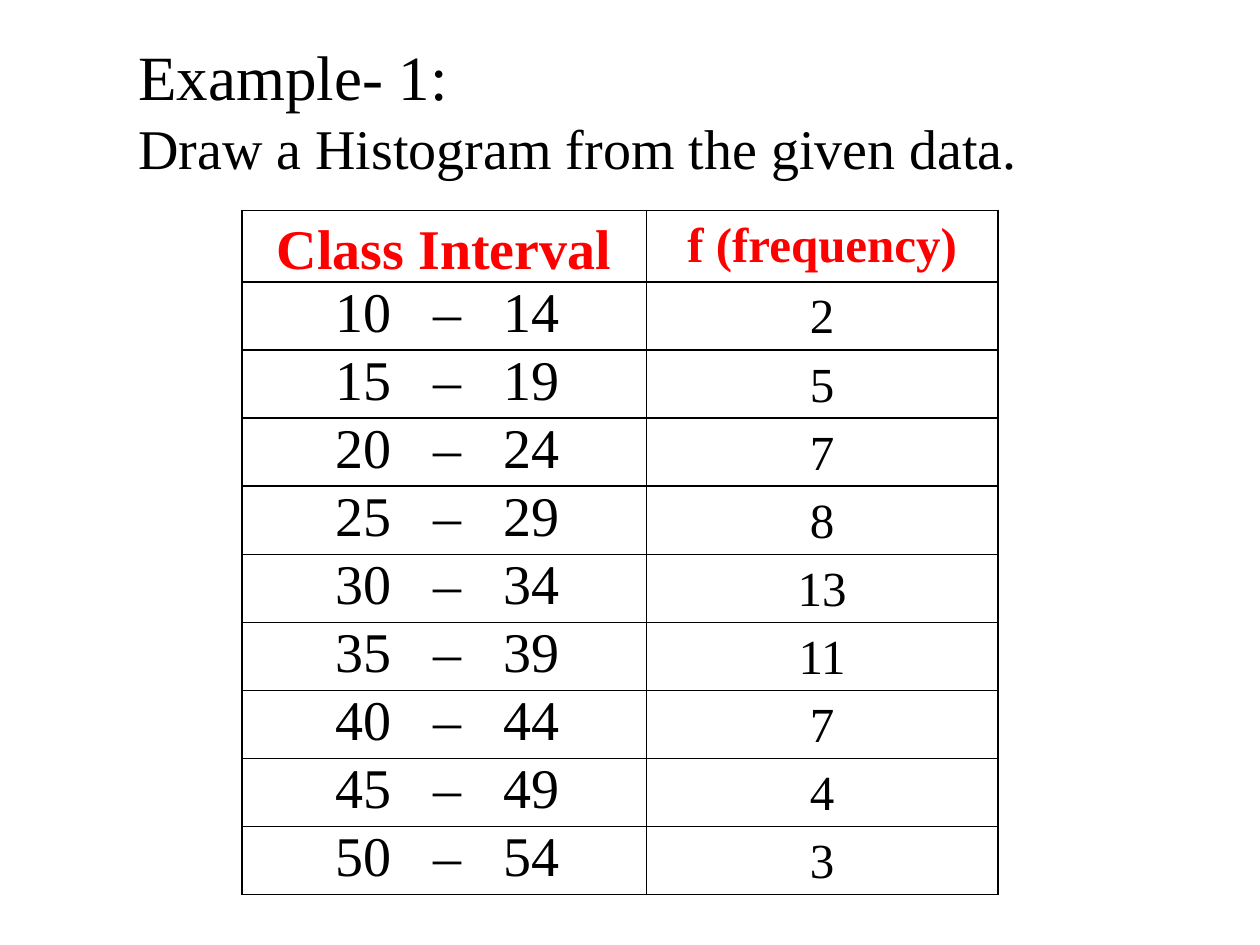
import pptx
import pptx.dml.color
import pptx.enum.text
import pptx.oxml
import pptx.oxml.ns
import pptx.util
from pptx.util import Inches

BLACK = pptx.dml.color.RGBColor(0, 0, 0)
RED = pptx.dml.color.RGBColor(255, 0, 0)
FONT_NAME = "Times New Roman"
CENTER = pptx.enum.text.PP_ALIGN.CENTER
FREQUENCIES = [2, 5, 7, 8, 13, 11, 7, 4, 3]
FIRST_CLASS, CLASS_WIDTH = 10, 5


def write_text(paragraph, text, size, color=BLACK, bold=False, align=None,
               line_spacing=None, space_before=None, indent=None, wide_space=None):
    """Fill a paragraph; wide_space widens each space by that many points."""
    paragraph.alignment = align
    paragraph.line_spacing = line_spacing
    if space_before is not None:
        paragraph.space_before = pptx.util.Pt(space_before)
    if indent is not None:
        paragraph._p.get_or_add_pPr().set("marL", str(indent))
    pieces = text.replace(" ", "| |").split("|") if wide_space else [text]
    for piece in pieces:
        run = paragraph.add_run()
        run.text = piece
        run.font.name = FONT_NAME
        run.font.size = pptx.util.Pt(size)
        run.font.bold = bold
        run.font.color.rgb = color
        if piece == " ":
            run._r.get_or_add_rPr().set("spc", str(wide_space * 100))


def format_cell(cell):
    """Clear the fill, set the margins and draw thin black borders."""
    cell.fill.background()
    cell.margin_left = cell.margin_right = Inches(0.07)
    cell.margin_top = cell.margin_bottom = 0
    properties = cell._tc.get_or_add_tcPr()
    for position, side in enumerate(("lnL", "lnR", "lnT", "lnB")):
        border = pptx.oxml.parse_xml(
            f'<a:{side} {pptx.oxml.ns.nsdecls("a")} w="12700">'
            f'<a:solidFill><a:srgbClr val="{BLACK}"/></a:solidFill></a:{side}>')
        properties.insert(position, border)


presentation = pptx.Presentation()
presentation.slide_width = Inches(10)
presentation.slide_height = Inches(7.5)
slide = presentation.slides.add_slide(presentation.slide_layouts[6])

# Frequency table
rows = len(FREQUENCIES) + 1
table_frame = slide.shapes.add_table(
    rows, 2, Inches(1.92), Inches(1.67), Inches(6), Inches(5.42))
table = table_frame.table
table.first_row = table.horz_banding = False
table.columns[0].width = Inches(3.21)
table.columns[1].width = Inches(2.79)
for row_number, row in enumerate(table.rows):
    row.height = Inches(0.54 if row_number else 0.57)
    for cell in row.cells:
        format_cell(cell)

# Header row
for column, (heading, size) in enumerate((("Class Interval", 32), ("f (frequency)", 28))):
    write_text(table.cell(0, column).text_frame.paragraphs[0], heading, size,
               color=RED, bold=True, align=CENTER, line_spacing=1.15, space_before=4.5)

# Class intervals and their frequencies
for row_number, frequency in enumerate(FREQUENCIES, start=1):
    lower = FIRST_CLASS + (row_number - 1) * CLASS_WIDTH
    interval = f"{lower} – {lower + CLASS_WIDTH - 1}"
    write_text(table.cell(row_number, 0).text_frame.paragraphs[0], interval, 32,
               align=CENTER, space_before=4.7, indent=Inches(0.06), wide_space=16)
    write_text(table.cell(row_number, 1).text_frame.paragraphs[0], str(frequency), 28,
               align=CENTER, line_spacing=1.15, space_before=4.5)

# Title and task
title_box = slide.shapes.add_textbox(Inches(1), Inches(0.25), Inches(8.5), Inches(1.25))
title_frame = title_box.text_frame
title_frame.word_wrap = True
title_frame.auto_size = pptx.enum.text.MSO_AUTO_SIZE.SHAPE_TO_FIT_TEXT
write_text(title_frame.paragraphs[0], "Example- 1:", 36)
write_text(title_frame.add_paragraph(), "Draw a Histogram from the given data.", 32)

presentation.save("out.pptx")
